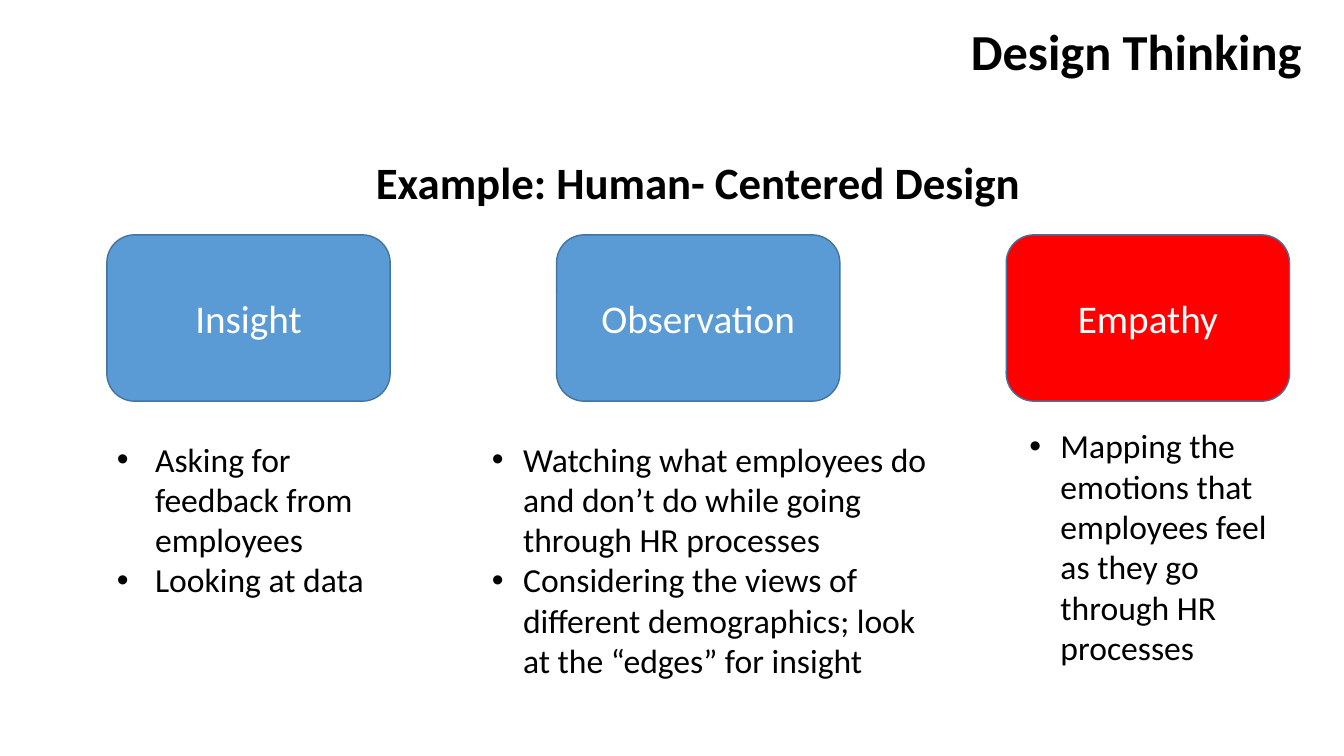
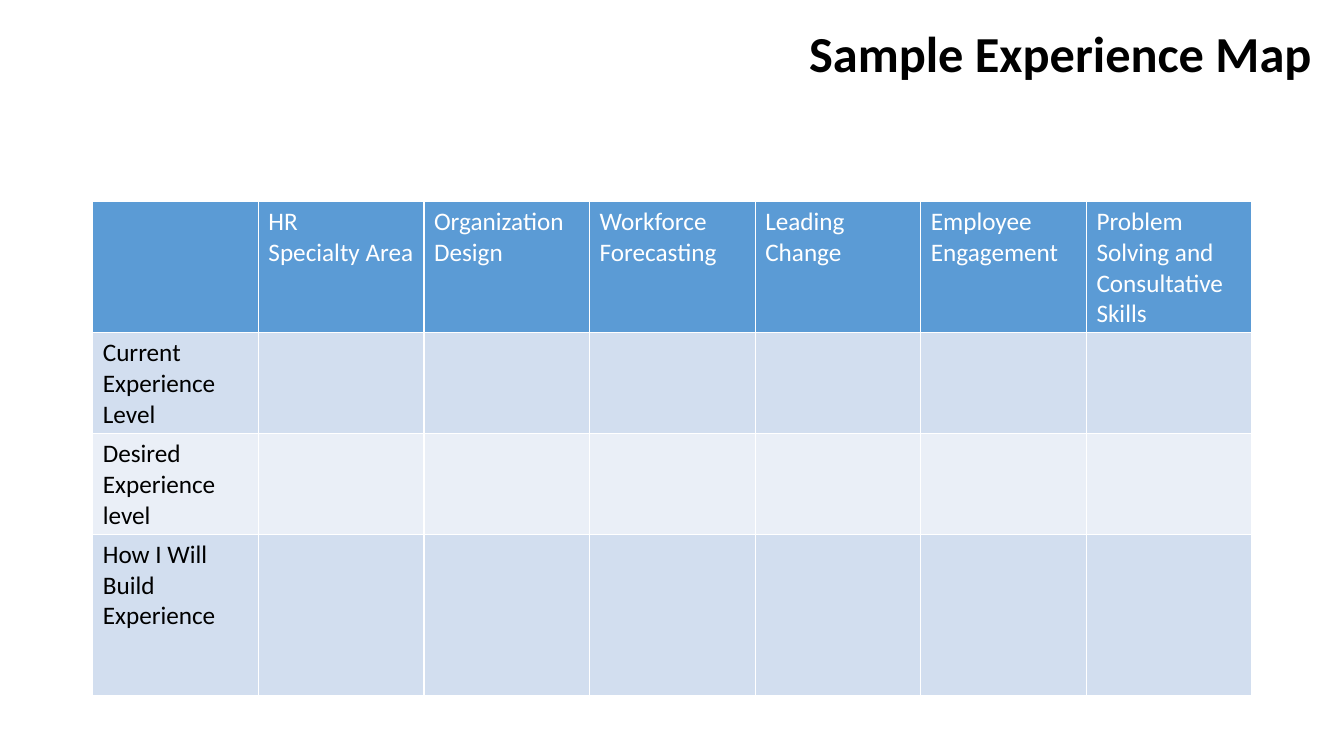
from lxml.etree import SubElement
from pptx import Presentation
from pptx.dml.color import RGBColor
from pptx.enum.shapes import MSO_SHAPE as Shape
from pptx.enum.text import MSO_ANCHOR as Anchor, MSO_AUTO_SIZE as AutoSize, PP_ALIGN as Align
from pptx.oxml.ns import qn
from pptx.util import Inches, Pt

FONT = "Calibri"
BLACK, WHITE, BLUE, RED = "000000", "FFFFFF", "5B9BD5", "FF0000"
OUTLINE = "43739E"
BANDS = ["D2DEEF", "EAEFF7"]


def rgb(color):
    return RGBColor.from_string(color)


def paint(fill, color):
    fill.solid()
    fill.fore_color.rgb = rgb(color)


def write(frame, lines, size, color=BLACK, align=Align.LEFT, bold=False):
    """Put each line in its own paragraph and return the paragraphs."""
    paragraphs = []
    for number, line in enumerate(lines):
        paragraph = frame.add_paragraph() if number else frame.paragraphs[0]
        paragraph.alignment = align
        run = paragraph.add_run()
        run.text = line
        run.font.name = FONT
        run.font.size = Pt(size)
        run.font.bold = bold
        run.font.color.rgb = rgb(color)
        paragraphs.append(paragraph)
    return paragraphs


def add_bullet(paragraph, indent):
    props = paragraph._p.get_or_add_pPr()
    props.set("marL", str(Inches(indent)))
    props.set("indent", str(-Inches(indent)))
    SubElement(props, qn("a:buFont"), typeface="Arial")
    SubElement(props, qn("a:buChar"), char="•")


def add_borders(cell, color, width):
    props = cell._tc.get_or_add_tcPr()
    for side in ("lnL", "lnR", "lnT", "lnB"):
        line = SubElement(props, qn(f"a:{side}"), w=str(Pt(width)))
        fill = SubElement(line, qn("a:solidFill"))
        SubElement(fill, qn("a:srgbClr"), val=color)


class Deck:
    def __init__(self):
        self.prs = Presentation()
        self.prs.slide_width = Inches(13.33)
        self.prs.slide_height = Inches(7.5)
        self.slide = None

    def new_slide(self):
        self.slide = self.prs.slides.add_slide(self.prs.slide_layouts[6])

    def text(self, box, lines, size, **style):
        frame = self.slide.shapes.add_textbox(*map(Inches, box)).text_frame
        frame.word_wrap = True
        frame.auto_size = AutoSize.SHAPE_TO_FIT_TEXT
        return write(frame, lines, size, **style)

    def title(self, box, title):
        self.text(box, [title], 36, align=Align.RIGHT, bold=True)

    def bullets(self, box, lines, indent):
        for paragraph in self.text(box, lines, 24):
            add_bullet(paragraph, indent)

    def card(self, box, label, color):
        card = self.slide.shapes.add_shape(Shape.ROUNDED_RECTANGLE, *map(Inches, box))
        card.shadow.inherit = False
        paint(card.fill, color)
        card.line.color.rgb = rgb(OUTLINE)
        card.line.width = Pt(1)
        card.text_frame.word_wrap = True
        card.text_frame.vertical_anchor = Anchor.MIDDLE
        write(card.text_frame, [label], 28, WHITE, Align.CENTER)

    def grid(self, box, headers, row_labels, heights):
        """Draw a table with a header row, labelled rows and empty cells to fill in."""
        rows = [headers] + [[label] + [""] * (len(headers) - 1) for label in row_labels]
        table = self.slide.shapes.add_table(
            len(rows), len(headers), *map(Inches, box)).table
        for column in table.columns:
            column.width = Inches(box[2] / len(headers))
        for r, (row, height) in enumerate(zip(rows, heights)):
            table.rows[r].height = Inches(height)
            for c, content in enumerate(row):
                cell = table.cell(r, c)
                add_borders(cell, WHITE, 1)
                paint(cell.fill, BANDS[(r - 1) % 2] if r else BLUE)
                if content:
                    write(cell.text_frame, content.split("\n"), 18, BLACK if r else WHITE)


def build_design_thinking(deck):
    deck.new_slide()
    deck.title((6.57, 0.15, 6.44, 0.71), "Design Thinking")
    deck.text((1.12, 1.49, 11.61, 0.64), ["Example: Human- Centered Design"], 32,
              align=Align.CENTER, bold=True)
    steps = [
        ("Insight", BLUE, (1.06, 4.3, 2.81, 1.72), 0.38,
         ["Asking for feedback from employees", "Looking at data"]),
        ("Observation", BLUE, (4.78, 4.3, 4.65, 2.52), 0.31,
         ["Watching what employees do and don’t do while going through HR processes",
          "Considering the views of different demographics; look at the “edges” for insight"]),
        ("Empathy", RED, (10.11, 4.17, 2.69, 2.52), 0.31,
         ["Mapping the emotions that employees feel as they go through HR processes"]),
    ]
    for number, (label, color, box, indent, details) in enumerate(steps):
        deck.card((1.06 + 4.46 * number, 2.33, 2.81, 1.65), label, color)
        deck.bullets(box, details, indent)


def build_experience_map(deck):
    deck.new_slide()
    deck.title((4.26, 0.17, 8.85, 0.71), "Sample Experience Map")
    deck.grid(
        (0.92, 2, 11.5, 4.9),
        ["", "HR\nSpecialty Area", "Organization Design", "Workforce Forecasting",
         "Leading Change", "Employee Engagement", "Problem Solving and Consultative Skills"],
        ["Current Experience Level", "Desired Experience level", "How I Will Build Experience"],
        [1.3, 1, 1, 1.6])


def main():
    deck = Deck()
    build_design_thinking(deck)
    build_experience_map(deck)
    deck.prs.save("out.pptx")


if __name__ == "__main__":
    main()
